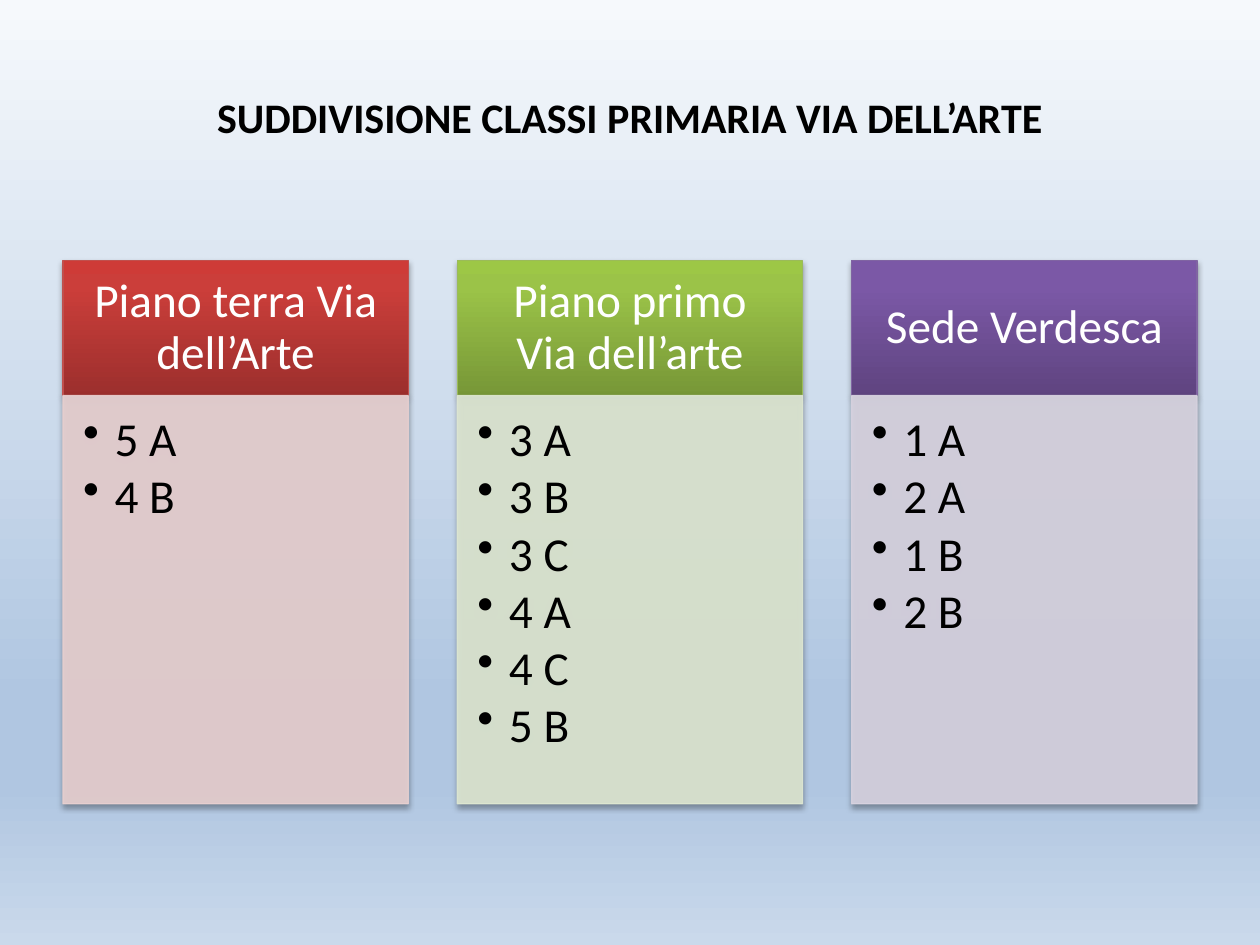
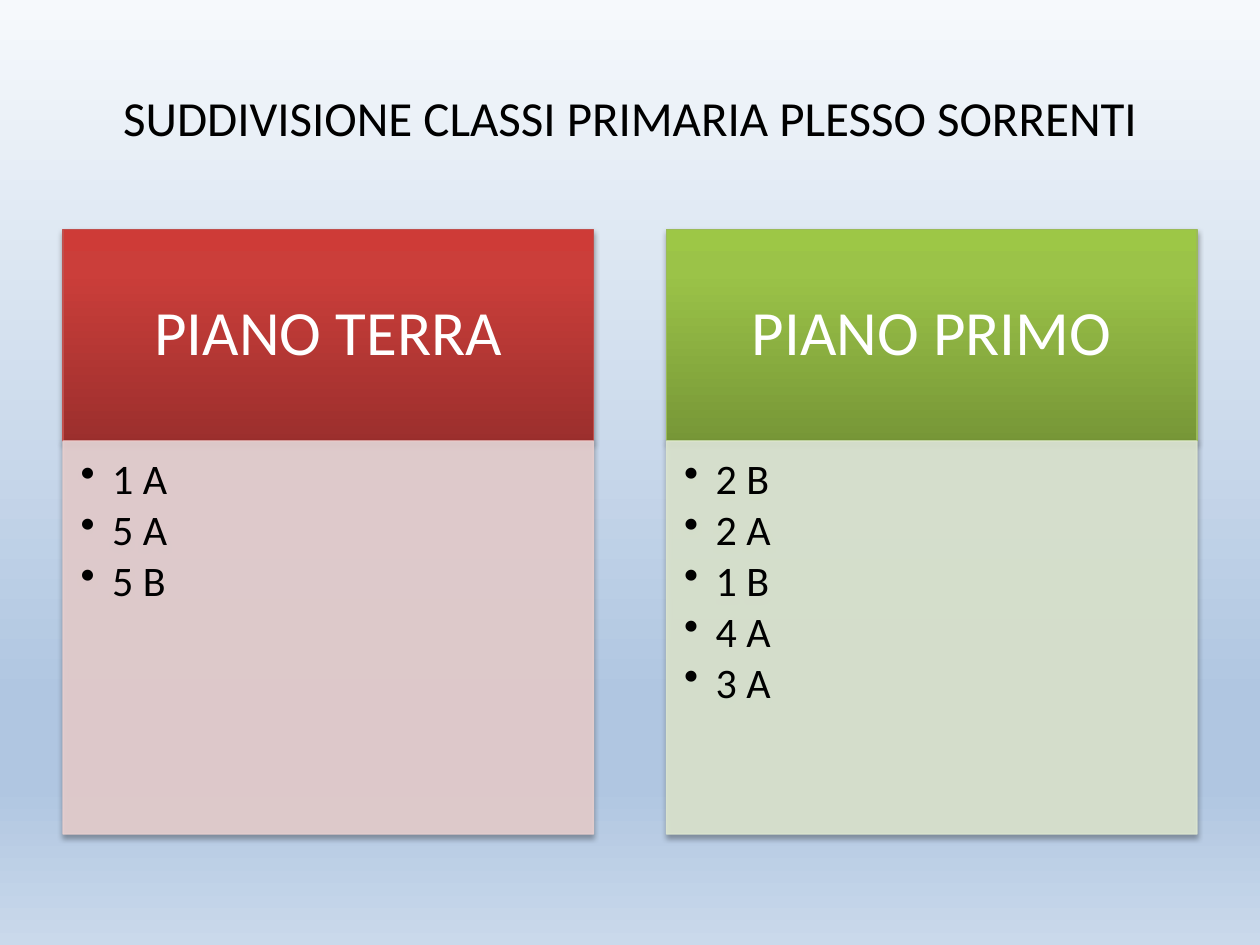
from lxml import etree
from pptx import Presentation
from pptx.dml.color import RGBColor
from pptx.enum.shapes import MSO_SHAPE
from pptx.enum.text import MSO_ANCHOR, PP_ALIGN
from pptx.oxml.ns import qn
from pptx.util import Pt

RECT = MSO_SHAPE.RECTANGLE
TOP, MIDDLE = MSO_ANCHOR.TOP, MSO_ANCHOR.MIDDLE
LEFT, CENTER = PP_ALIGN.LEFT, PP_ALIGN.CENTER

PX = 9144  # 100 px to the inch
WIDE, HIGH = 1000, 750
SIDE = 50
SPAN = WIDE - 2 * SIDE
GAP = 0.14  # of a column's width
INDENT = 25
FONT = "Calibri"
HEAD_PAD = (0.78, 0.45, 0.78, 0.45)  # px per point of text: left, top, right, bottom
BODY_PAD = (0.59, 0.59, 0.79, 0.89)

COLORS = {"black": "000000", "white": "FFFFFF"}
SKY = [(0, "F6F9FC"), (74, "B0C6E1"), (83, "B0C6E1"), (100, "CAD9EB")]
THEMES = [
    {"grad": [(0, "9C2F2D"), (80, "CB3E3A"), (100, "CE3B37")], "edge": "C0504D", "tint": "E8D0D0"},
    {"grad": [(0, "779737"), (80, "9BC348"), (100, "9DC746")], "edge": "9BBB59", "tint": "DEE7D1"},
    {"grad": [(0, "5F4480"), (80, "7B58A6"), (100, "7C57A8")], "edge": "8064A2", "tint": "D8D3E0"},
]

SLIDES = [
    {
        "title": "SUDDIVISIONE CLASSI PRIMARIA VIA DELL’ARTE",
        "size": 24, "bold": True,
        "top": 207, "split": 314, "end": 638,
        "head": 27, "body": 27,
        "columns": [
            ("Piano terra Via dell’Arte", ["5 A", "4 B"]),
            ("Piano primo Via dell’arte", ["3 A", "3 B", "3 C", "4 A", "4 C", "5 B"]),
            ("Sede Verdesca", ["1 A", "2 A", "1 B", "2 B"]),
        ],
    },
    {
        "title": "SUDDIVISIONE CLASSI PRIMARIA PLESSO SORRENTI",
        "size": 28, "bold": False,
        "top": 182, "split": 350, "end": 662,
        "head": 36, "body": 24,
        "columns": [
            ("PIANO TERRA", ["1 A", "5 A", "5 B"]),
            ("PIANO PRIMO", ["2 B", "2 A", "1 B", "4 A", "3 A"]),
        ],
    },
]


def px(*sizes):
    return [round(size) * PX for size in sizes]


def add(parent, tag, **attrs):
    node = etree.SubElement(parent, qn(tag))
    for key, value in attrs.items():
        node.set(key, str(value))
    return node


def blend(fill, owner, stops, angle):
    """Give fill, held in the element owner, a linear gradient of any number of stops."""
    fill.gradient()
    node = next(owner.iter(qn("a:gradFill")))
    for child in list(node):
        node.remove(child)
    row = add(node, "a:gsLst")
    for place, color in stops:
        add(add(row, "a:gs", pos=place * 1000), "a:srgbClr", val=color)
    add(node, "a:lin", ang=angle * 60000, scaled=0)


def shade(shape):
    shape.shadow.inherit = False
    effects = next(shape.element.iter(qn("a:effectLst")))
    drop = add(effects, "a:outerShdw", blurRad=40000, dist=23000, dir=5400000, rotWithShape=0)
    add(add(drop, "a:srgbClr", val=COLORS["black"]), "a:alpha", val=35000)


def write(shape, lines, size, color, align, anchor, bold=False):
    frame = shape.text_frame
    frame.word_wrap = True
    frame.vertical_anchor = anchor
    frame.text = "\n".join(lines)
    for para in frame.paragraphs:
        para.alignment = align
        for run in para.runs:
            run.font.name = FONT
            run.font.size = Pt(size)
            run.font.bold = bold
            run.font.color.rgb = RGBColor.from_string(COLORS[color])
    return frame


def pack(frame, size, ratios):
    """Set tight lines and margins in proportion to the text size."""
    (frame.margin_left, frame.margin_top,
     frame.margin_right, frame.margin_bottom) = px(*(size * r for r in ratios))
    for para in frame.paragraphs:
        para.line_spacing = 0.9


def panel(slide, box, edge):
    shape = slide.shapes.add_shape(RECT, *px(*box))
    shape.line.color.rgb = RGBColor.from_string(edge)
    shape.line.width = Pt(0.75)
    return shape


def add_head(slide, box, theme, label, size):
    shape = panel(slide, box, theme["edge"])
    blend(shape.fill, shape.element, theme["grad"], 270)
    shade(shape)
    pack(write(shape, [label], size, "white", CENTER, MIDDLE), size, HEAD_PAD)


def add_body(slide, box, theme, items, size):
    shape = panel(slide, box, theme["tint"])
    shape.fill.solid()
    shape.fill.fore_color.rgb = RGBColor.from_string(theme["tint"])
    for color in shape.element.iter(qn("a:srgbClr")):
        add(color, "a:alpha", val=90000)
    shade(shape)
    frame = write(shape, items, size, "black", LEFT, TOP)
    pack(frame, size, BODY_PAD)
    for para in frame.paragraphs:
        para.space_after = Pt(size * 0.13)
        props = para.runs[0].font and para._p.get_or_add_pPr()
        props.set("marL", str(INDENT * PX))
        props.set("indent", str(-INDENT * PX))
        add(props, "a:buChar", char="•")


def build(deck, data):
    slide = deck.slides.add_slide(deck.slide_layouts[6])
    blend(slide.background.fill, slide.element, SKY, 90)
    title = slide.shapes.add_textbox(*px(SIDE, 30, SPAN, 125))
    write(title, [data["title"]], data["size"], "black", CENTER, MIDDLE, data["bold"])
    columns, top, split = data["columns"], data["top"], data["split"]
    count = len(columns)
    width = SPAN / (count + GAP * (count - 1))
    for i, ((label, items), theme) in enumerate(zip(columns, THEMES)):
        left = SIDE + i * width * (1 + GAP)
        add_head(slide, (left, top, width, split - top), theme, label, data["head"])
        add_body(slide, (left, split, width, data["end"] - split), theme, items, data["body"])


def main():
    deck = Presentation()
    deck.slide_width, deck.slide_height = px(WIDE, HIGH)
    for data in SLIDES:
        build(deck, data)
    deck.save("out.pptx")


if __name__ == "__main__":
    main()
